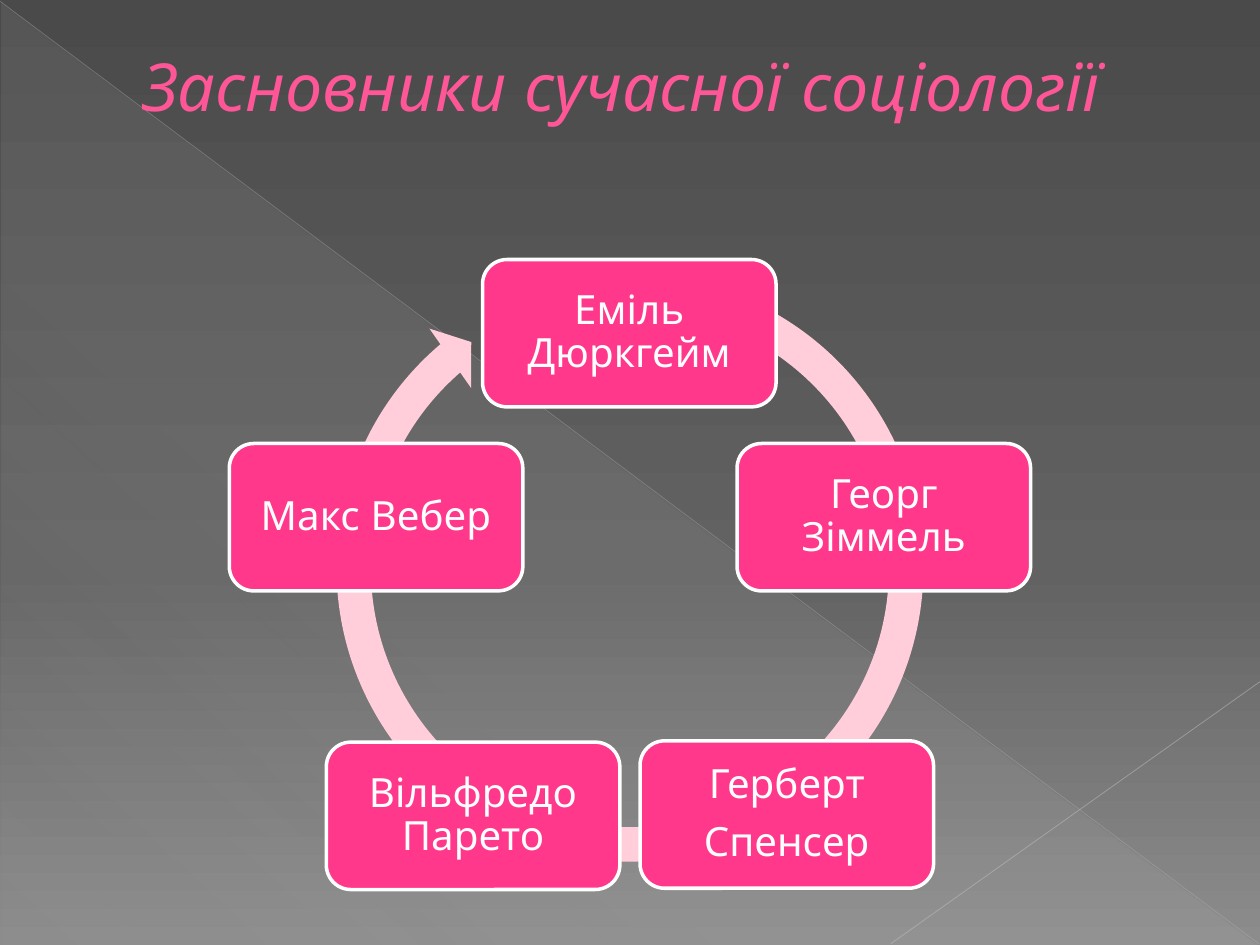
from lxml import etree
from pptx import Presentation
from pptx.dml.color import RGBColor
from pptx.enum import shapes, text
from pptx.oxml import ns
from pptx.util import Inches, Pt

FONT = "Quicksand"
COLORS = {
    "title": "FF5698", "title_edge": "B12761", "ring": "FFCEDA",
    "card": "FF388C", "white": "FFFFFF", "facet": "D2D2D2",
    "diagonal": "BFBFBF", "corner": "C6C6C6",
    "bg_top": "4A4A4A", "bg_middle": "626262", "bg_bottom": "8C8C8C",
}
CARD_W, CARD_H = 2.33, 1.17
FOUNDERS = [  # paragraphs, left, top
    (["Еміль Дюркгейм"], 3.83, 2.06),
    (["Георг Зіммель"], 5.85, 3.52),
    (["Герберт", "Спенсер"], 5.08, 5.88),
    (["Вільфредо Парето"], 2.59, 5.89),
    (["Макс Вебер"], 1.82, 3.52),
]


def rgb(name):
    return RGBColor.from_string(COLORS[name])


def add_color(parent, name, alpha=100):
    color = etree.SubElement(parent, ns.qn("a:srgbClr"), val=COLORS[name])
    if alpha < 100:
        etree.SubElement(color, ns.qn("a:alpha"), val=str(alpha * 1000))


def set_gradient(properties, stops, angle):
    """Replace a solid fill by a gradient of (position, color, opacity) stops."""
    solid = properties.find(ns.qn("a:solidFill"))
    gradient = etree.Element(ns.qn("a:gradFill"), rotWithShape="1")
    stop_list = etree.SubElement(gradient, ns.qn("a:gsLst"))
    for position, name, alpha in stops:
        stop = etree.SubElement(stop_list, ns.qn("a:gs"), pos=str(position * 1000))
        add_color(stop, name, alpha)
    etree.SubElement(gradient, ns.qn("a:lin"), ang=str(angle * 60000), scaled="0")
    properties.replace(solid, gradient)


def write_text(frame, paragraphs, size, color, align, margins, italic=False,
               spacing=1.0, after=0, edge=None):
    frame.word_wrap = True
    frame.vertical_anchor = text.MSO_ANCHOR.MIDDLE
    (frame.margin_left, frame.margin_top,
     frame.margin_right, frame.margin_bottom) = map(Inches, margins)
    for index, content in enumerate(paragraphs):
        paragraph = frame.add_paragraph() if index else frame.paragraphs[0]
        paragraph.alignment = align
        paragraph.line_spacing = spacing
        paragraph.space_after = Pt(after)
        run = paragraph.add_run()
        run.text = content
        run.font.name, run.font.size, run.font.italic = FONT, Pt(size), italic
        run.font.color.rgb = rgb(color)
        if edge:
            outline = etree.Element(ns.qn("a:ln"), w=str(Pt(0.5)))
            add_color(etree.SubElement(outline, ns.qn("a:solidFill")), edge)
            run.font._element.insert(0, outline)


def add_shape(slide, kind, box, fill, line=None):
    shape = slide.shapes.add_shape(kind, *map(Inches, box))
    shape.shadow.inherit = False
    shape.fill.solid()
    shape.fill.fore_color.rgb = rgb(fill)
    if line:
        shape.line.color.rgb = rgb(line)
        shape.line.width = Pt(2)
    else:
        shape.line.fill.background()
    return shape


def add_line(slide, ends, color, width, alpha):
    line = slide.shapes.add_connector(
        shapes.MSO_CONNECTOR.STRAIGHT, *map(Inches, ends))
    line.line.color.rgb = rgb(color)
    line.line.width = Pt(width)
    properties = line._element.spPr
    solid = properties.find(".//" + ns.qn("a:solidFill"))
    solid.clear()
    add_color(solid, color, alpha)
    etree.SubElement(properties, ns.qn("a:effectLst"))


def add_backdrop(slide):
    slide.background.fill.solid()
    set_gradient(slide._element.find(".//" + ns.qn("p:bgPr")),
                 [(0, "bg_top", 100), (60, "bg_middle", 100),
                  (100, "bg_bottom", 100)], 90)
    facet = add_shape(slide, shapes.MSO_SHAPE.RIGHT_TRIANGLE,
                      (0.01, 0.02, 9.98, 7.48), "facet")
    set_gradient(facet._element.spPr,
                 [(0, "facet", 10), (70, "facet", 8), (100, "facet", 1)], 133)
    add_line(slide, (0, 0.01, 9.99, 7.49), "diagonal", 0.39, 35)
    add_line(slide, (10, 5.41, 7.07, 7.49), "corner", 0.47, 45)


def add_title(slide):
    title = slide.shapes.add_textbox(*map(Inches, (0.5, 0.13, 9.5, 1.69)))
    # The deep bottom margin lifts the line above the middle of its box
    write_text(title.text_frame, ["Засновники сучасної соціології"], 37.8,
               "title", text.PP_ALIGN.LEFT, (0.63, 0.05, 0.1, 0.65),
               italic=True, edge="title_edge")


def add_cycle(slide):
    ring = add_shape(slide, shapes.MSO_SHAPE.CIRCULAR_ARROW,
                     (2.52, 2.03, 4.96, 4.96), "ring")
    for index, value in enumerate((0.055, 3.307, 137.661, 173.92, 0.058)):
        ring.adjustments[index] = value
    for names, left, top in FOUNDERS:
        card = add_shape(slide, shapes.MSO_SHAPE.ROUNDED_RECTANGLE,
                         (left, top, CARD_W, CARD_H), "card", "white")
        write_text(card.text_frame, names, 23, "white", text.PP_ALIGN.CENTER,
                   (0.1, 0.1, 0.1, 0.1), spacing=0.9, after=8)


def main():
    deck = Presentation()
    deck.slide_width, deck.slide_height = Inches(10), Inches(7.5)
    slide = deck.slides.add_slide(deck.slide_layouts[6])
    add_backdrop(slide)
    add_title(slide)
    add_cycle(slide)
    deck.save("out.pptx")


if __name__ == "__main__":
    main()
